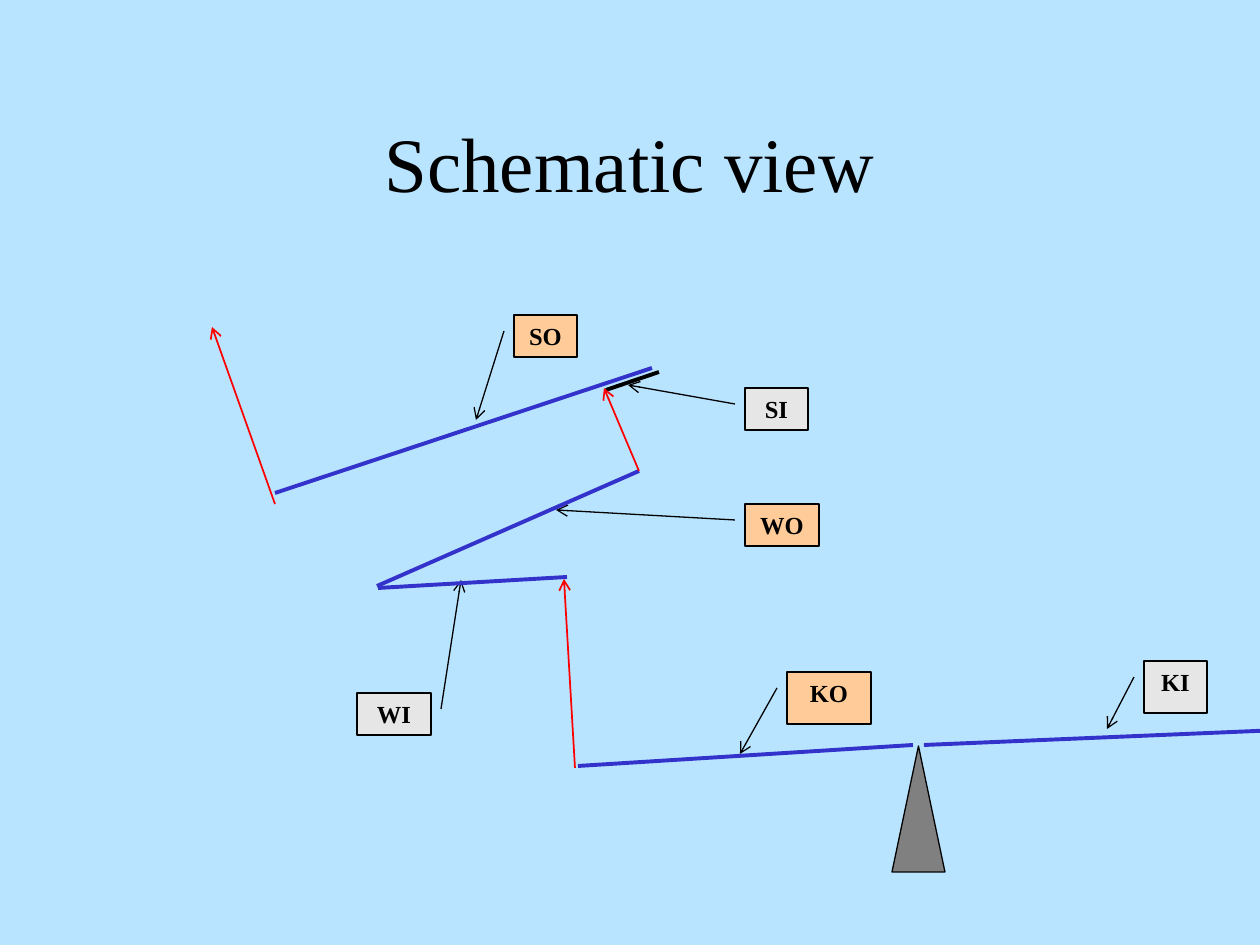
from dataclasses import dataclass

from lxml.etree import SubElement
from pptx import Presentation
from pptx.dml.color import RGBColor
from pptx.enum.shapes import MSO_CONNECTOR, MSO_SHAPE
from pptx.enum.text import MSO_ANCHOR, PP_ALIGN
from pptx.oxml.ns import qn
from pptx.util import Emu, Pt

FONT = "Times New Roman"
BLACK, BLUE, RED = "000000", "3333CC", "FF0000"
INPUT, OUTPUT = "E6E6E6", "FFCC99"
GAP, DROP = 10, 16  # where a pointer starts, beside its label


@dataclass
class Line:
    x1: int
    y1: int
    x2: int
    y2: int
    color: str = BLUE
    width: float = 2.25
    arrow: bool = False


@dataclass
class Label:
    text: str
    x: int
    y: int
    w: int
    h: int
    fill: str
    tip: tuple[int, int]


LABELS = [
    Label("KI", 1144, 661, 63, 52, INPUT, (1107, 729)),
    Label("KO", 787, 672, 84, 52, OUTPUT, (740, 754)),
    Label("WI", 357, 693, 74, 42, INPUT, (461, 580)),
    Label("WO", 745, 504, 74, 42, OUTPUT, (556, 510)),
    Label("SI", 745, 388, 63, 42, INPUT, (628, 385)),
    Label("SO", 514, 315, 63, 42, OUTPUT, (476, 420)),
]

LINES = [
    Line(924, 745, 1659, 714),
    Line(913, 745, 578, 766),
    Line(575, 768, 564, 579, RED, 1, True),
    Line(378, 588, 567, 577),
    Line(377, 586, 639, 471),
    Line(659, 372, 606, 390, BLACK),
    Line(652, 368, 275, 493),
    Line(639, 471, 604, 388, RED, 1, True),
    Line(275, 504, 212, 327, RED, 1, True),
]


def px(n: int) -> Emu:
    return Emu(round(n * 914400 / 126))


def rgb(code: str) -> RGBColor:
    return RGBColor.from_string(code)


def add_line(slide, line: Line) -> None:
    ends = map(px, (line.x1, line.y1, line.x2, line.y2))
    shape = slide.shapes.add_connector(MSO_CONNECTOR.STRAIGHT, *ends)
    shape.line.color.rgb = rgb(line.color)
    shape.line.width = Pt(line.width)
    if line.arrow:
        SubElement(shape.line._get_or_add_ln(), qn("a:tailEnd"), type="arrow")
    SubElement(shape._element.spPr, qn("a:effectLst"))


def add_shape(slide, kind: MSO_SHAPE, x: int, y: int, w: int, h: int, fill: str):
    shape = slide.shapes.add_shape(kind, px(x), px(y), px(w), px(h))
    shape.shadow.inherit = False
    shape.fill.solid()
    shape.fill.fore_color.rgb = rgb(fill)
    shape.line.color.rgb = rgb(BLACK)
    shape.line.width = Pt(0.75)
    return shape


def add_text(frame, text: str, size: int, bold: bool) -> None:
    para = frame.paragraphs[0]
    para.alignment = PP_ALIGN.CENTER
    run = para.add_run()
    run.text = text
    run.font.name = FONT
    run.font.size = Pt(size)
    run.font.bold = bold
    run.font.color.rgb = rgb(BLACK)


def add_label(slide, label: Label) -> None:
    box = add_shape(slide, MSO_SHAPE.RECTANGLE, label.x, label.y,
                    label.w, label.h, label.fill)
    frame = box.text_frame
    frame.vertical_anchor = MSO_ANCHOR.TOP
    add_text(frame, label.text, 14, True)
    frame.paragraphs[0].space_before = Pt(8.7)
    # The pointer leaves from the side that faces its tip
    right = label.tip[0] > label.x + label.w
    start = label.x + label.w + GAP if right else label.x - GAP
    add_line(slide, Line(start, label.y + DROP, *label.tip, BLACK, 0.75, True))


def main() -> None:
    deck = Presentation()
    deck.slide_width, deck.slide_height = px(1260), px(945)
    slide = deck.slides.add_slide(deck.slide_layouts[5])
    slide.background.fill.solid()
    slide.background.fill.fore_color.rgb = rgb("B9E4FF")

    # Title
    title = slide.shapes.title
    title.left, title.top = px(94), px(77)
    title.width, title.height = px(1071), px(170)
    title.text_frame.vertical_anchor = MSO_ANCHOR.MIDDLE
    add_text(title.text_frame, "Schematic view", 44, False)

    # Labels with pointers, then levers and forces
    for label in LABELS:
        add_label(slide, label)
    for line in LINES:
        add_line(slide, line)

    # Pivot
    add_shape(slide, MSO_SHAPE.ISOSCELES_TRIANGLE, 892, 746, 53, 126, "808080")
    deck.save("out.pptx")


if __name__ == "__main__":
    main()
